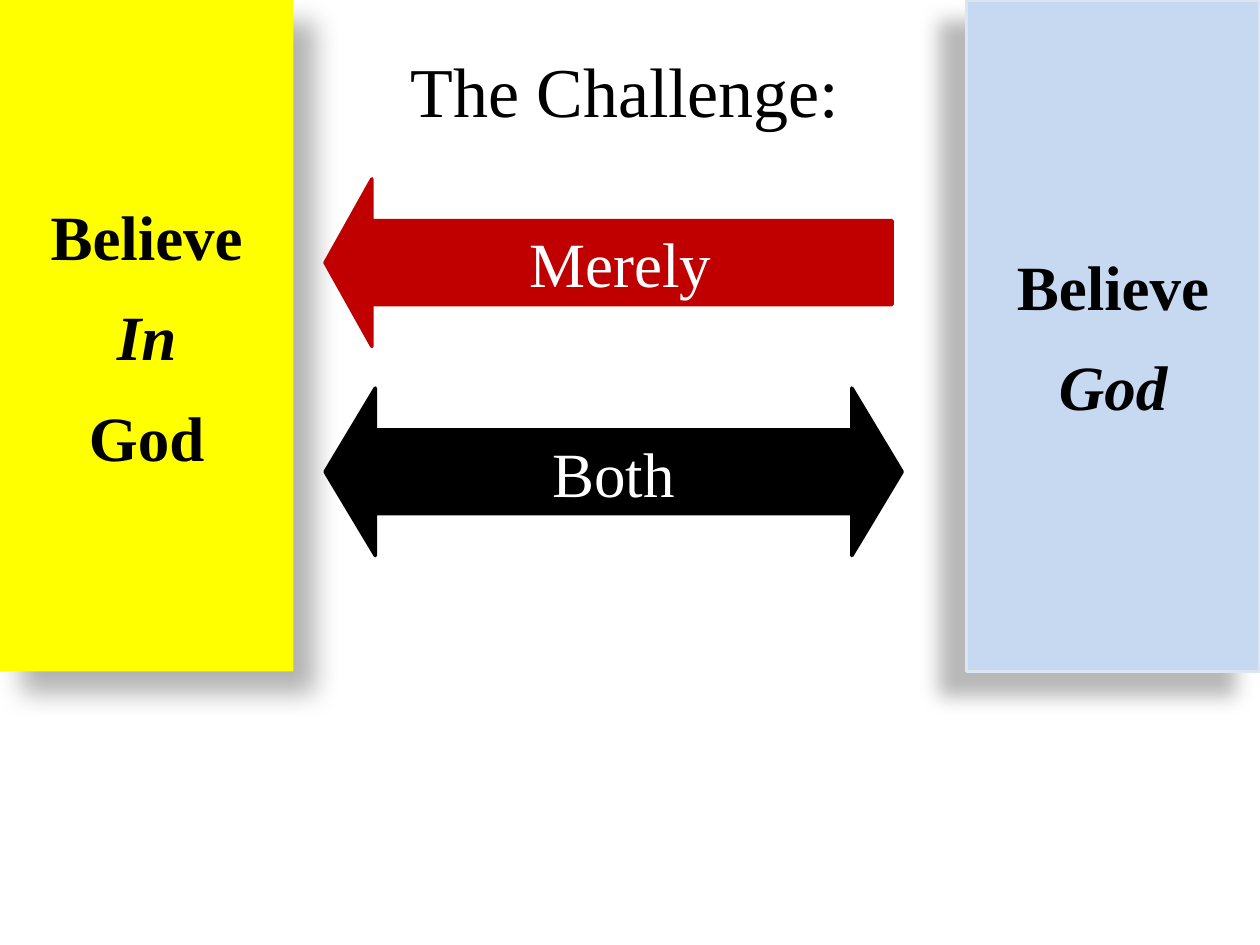
from lxml.etree import SubElement
from pptx import Presentation
from pptx.dml.color import RGBColor
from pptx.enum.shapes import MSO_SHAPE as Shape
from pptx.enum.text import MSO_ANCHOR as Anchor, MSO_AUTO_SIZE as AutoSize, PP_ALIGN as Align
from pptx.oxml.ns import qn
from pptx.util import Inches, Pt

FONT = "Times New Roman"
COLORS = {"black": "000000", "white": "FFFFFF", "yellow": "FFFF00",
          "blue": "C6D9F1", "pale": "DCE6F2", "red": "C00000"}


def add_block(kind, box, fill, line, words, text_color, bold=False):
    """Add a filled shape with one centred paragraph per (word, italic) pair."""
    block = slide.shapes.add_shape(kind, *map(Inches, box))
    block.shadow.inherit = False
    block.fill.solid()
    block.fill.fore_color.rgb = RGBColor.from_string(COLORS[fill])
    if line:
        block.line.color.rgb = RGBColor.from_string(COLORS[line])
        block.line.width = Pt(2)
    else:
        block.line.fill.background()
    frame = block.text_frame
    frame.vertical_anchor = Anchor.MIDDLE
    for i, (word, italic) in enumerate(words):
        paragraph = frame.add_paragraph() if i else frame.paragraphs[0]
        paragraph.alignment = Align.CENTER
        if i:
            paragraph.space_before = Pt(14)
        run = paragraph.add_run()
        run.text = word
        style = {"name": FONT, "size": Pt(36), "bold": bold, "italic": italic}
        for key, value in style.items():
            setattr(run.font, key, value)
        run.font.color.rgb = RGBColor.from_string(COLORS[text_color])
    return block


def add_shadow(block, opacity, blur, distance, angle, corner):
    """Cast a black shadow; opacity in percent, blur and distance in points."""
    effects = block._element.spPr.find(qn("a:effectLst"))
    shadow = SubElement(effects, qn("a:outerShdw"), blurRad=str(Pt(blur)),
                        dist=str(Pt(distance)), dir=str(angle * 60000),
                        algn=corner, rotWithShape="0")
    color = SubElement(shadow, qn("a:srgbClr"), val=COLORS["black"])
    SubElement(color, qn("a:alpha"), val=str(opacity * 1000))


prs = Presentation()
prs.slide_width, prs.slide_height = Inches(10), Inches(7.5)
slide = prs.slides.add_slide(prs.slide_layouts[5])

# Side panels
PANEL_W, PANEL_H = 2.33, 5.33
believe_in = add_block(Shape.RECTANGLE, (0, 0, PANEL_W, PANEL_H), "yellow", None,
                       [("Believe", False), ("In", True), ("God", False)], "black", bold=True)
add_shadow(believe_in, 30, 15, 18, 45, "tl")
believe = add_block(Shape.RECTANGLE, (10 - PANEL_W, 0, PANEL_W, PANEL_H), "blue", "pale",
                    [("Believe", False), ("God", True)], "black", bold=True)
add_shadow(believe, 28, 11.8, 19.7, 141, "tr")

# Heading
heading = slide.shapes.title
heading.left, heading.top, heading.width, heading.height = map(Inches, (3, 0.33, 3.92, 0.77))
heading.text_frame.text = "The Challenge:"
heading.text_frame.vertical_anchor = Anchor.TOP
heading.text_frame.auto_size = AutoSize.SHAPE_TO_FIT_TEXT
heading_line = heading.text_frame.paragraphs[0]
heading_line.alignment = Align.CENTER
heading_font = heading_line.runs[0].font
heading_font.name, heading_font.size = FONT, Pt(40)
heading_font.color.rgb = RGBColor.from_string(COLORS["black"])

# Arrows between the panels
ARROWS = [
    (Shape.LEFT_ARROW, 1.42, 4.5, "red", "Merely", 0.28),
    (Shape.LEFT_RIGHT_ARROW, 3.08, 4.58, "black", "Both", 0.3),
]
for kind, top, width, color, word, head in ARROWS:
    arrow = add_block(kind, (2.58, top, width, 1.33), color, color, [(word, False)], "white")
    arrow.adjustments[0] = 0.5
    arrow.adjustments[1] = head

prs.save("out.pptx")
